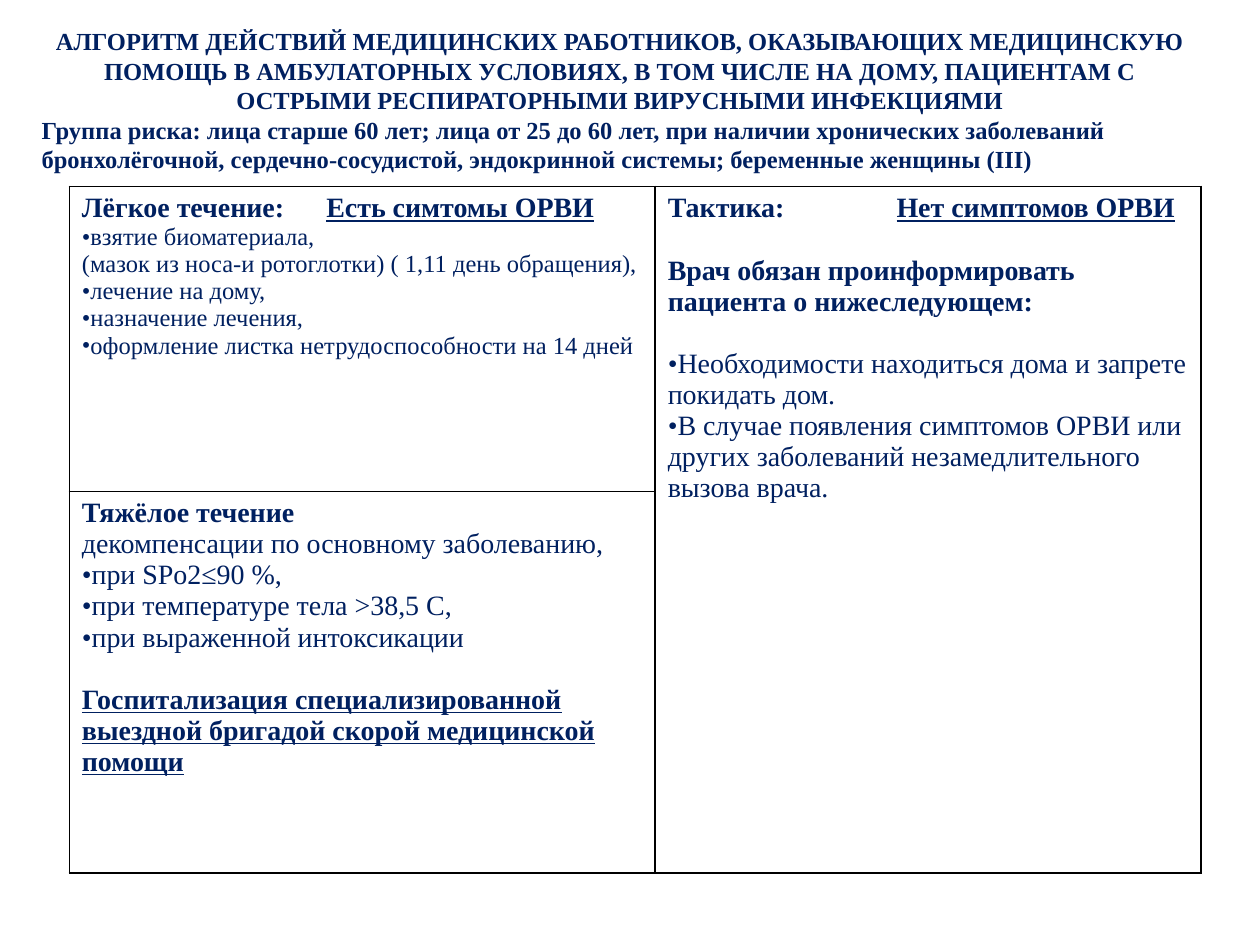
import pptx
import pptx.dml.color
import pptx.enum.text
import pptx.oxml
import pptx.oxml.ns
import pptx.util
from lxml import etree

Inches, Pt = pptx.util.Inches, pptx.util.Pt
NAVY = pptx.dml.color.RGBColor(0x00, 0x20, 0x60)
BLACK = pptx.dml.color.RGBColor(0, 0, 0)
FONT = "Times New Roman"
SMALL_SIZE, CELL_SIZE = 14, 16
BLANK_LINE = 17.8
LEFT = pptx.enum.text.PP_ALIGN.LEFT
CENTER = pptx.enum.text.PP_ALIGN.CENTER


class AlgorithmSlide:
    """Holds the text style and the slide being filled."""

    def __init__(self, deck):
        self.slide = deck.slides.add_slide(deck.slide_layouts[1])

    def child(self, parent, tag, **attributes):
        return etree.SubElement(parent, pptx.oxml.ns.qn(tag), attributes)

    def paragraph(self, frame, runs, size=CELL_SIZE, first=False, bullet=False,
                  gap=0, before=0, align=LEFT):
        """Add a paragraph; runs are (text, style) with b = bold, u = underlined.

        A run with style g is a space widened by gap points.
        """
        par = frame.paragraphs[0] if first else frame.add_paragraph()
        props = par._p.get_or_add_pPr()
        props.set("marL", "0")
        props.set("indent", "0")
        if bullet:
            self.child(props, "a:buFont", typeface=FONT)
            self.child(props, "a:buChar", char="•")
        else:
            self.child(props, "a:buNone")
        par.alignment = align
        par.space_before = Pt(before)
        for text, style in runs:
            run = par.add_run()
            run.text = text
            run.font.name = FONT
            run.font.size = Pt(size)
            run.font.color.rgb = NAVY
            run.font.bold = "b" in style
            run.font.underline = "u" in style
            if "g" in style:
                run._r.get_or_add_rPr().set("spc", str(gap * 100))

    def heading(self, placeholder, box, text, align):
        """Place a placeholder and fill it with one bold paragraph."""
        placeholder.left, placeholder.top, placeholder.width, placeholder.height = map(Inches, box)
        frame = placeholder.text_frame
        frame.word_wrap = True
        frame.auto_size = pptx.enum.text.MSO_AUTO_SIZE.SHAPE_TO_FIT_TEXT
        frame.vertical_anchor = pptx.enum.text.MSO_ANCHOR.TOP
        self.paragraph(frame, [(text, "b")], SMALL_SIZE, first=True, align=align)

    def table(self, box, columns, rows):
        """Add an unfilled table with thin black borders."""
        table = self.slide.shapes.add_table(len(rows), len(columns), *map(Inches, box)).table
        table.first_row = table.horz_banding = False
        for column, width in zip(table.columns, columns):
            column.width = Inches(width)
        for row, height in zip(table.rows, rows):
            row.height = Inches(height)
        for cell in table.iter_cells():
            props = cell._tc.get_or_add_tcPr()
            for side in ("a:lnL", "a:lnR", "a:lnT", "a:lnB"):
                line = self.child(props, side, w=str(Pt(1)))
                self.child(self.child(line, "a:solidFill"), "a:srgbClr", val=str(BLACK))
            cell.fill.background()
        return table

    def cell(self, cell, paragraphs):
        """Fill a cell; each paragraph is (runs, options)."""
        for number, (runs, options) in enumerate(paragraphs):
            self.paragraph(cell.text_frame, runs, first=number == 0, **options)


def main():
    deck = pptx.Presentation()
    deck.slide_width, deck.slide_height = Inches(10), Inches(7.5)
    page = AlgorithmSlide(deck)

    # Title and risk group
    title, risk_group = page.slide.placeholders
    page.heading(
        title, (0.23, 0.16, 9.38, 0.81),
        "АЛГОРИТМ ДЕЙСТВИЙ МЕДИЦИНСКИХ РАБОТНИКОВ, ОКАЗЫВАЮЩИХ МЕДИЦИНСКУЮ ПОМОЩЬ "
        "В АМБУЛАТОРНЫХ УСЛОВИЯХ, В ТОМ ЧИСЛЕ НА ДОМУ, ПАЦИЕНТАМ С ОСТРЫМИ "
        "РЕСПИРАТОРНЫМИ ВИРУСНЫМИ ИНФЕКЦИЯМИ", CENTER)
    page.heading(
        risk_group, (0.23, 0.86, 9.22, 0.57),
        "Группа риска: лица старше 60 лет; лица от 25 до 60 лет, при наличии "
        "хронических заболеваний бронхолёгочной, сердечно-сосудистой, эндокринной "
        "системы; беременные женщины (III)", LEFT)

    # Table: two courses on the left, one tall tactics cell on the right
    courses = page.table((0.55, 1.48, 8.98, 5.45), (4.65, 4.33), (2.42, 3.03))
    mild, tactics, severe = courses.cell(0, 0), courses.cell(0, 1), courses.cell(1, 0)
    tactics.merge(courses.cell(1, 1))

    # Mild course
    small = {"size": SMALL_SIZE}
    small_bullet = {"size": SMALL_SIZE, "bullet": True}
    page.cell(mild, [
        ([("Лёгкое течение:", "b"), (" ", "bg"), ("Есть симтомы ОРВИ", "bu")], {"gap": 20}),
        ([("взятие биоматериала,", "")], small_bullet),
        ([("(мазок из носа-и ротоглотки) ( 1,11 день обращения),", "")], small),
        ([("лечение на дому,", "")], small_bullet),
        ([("назначение лечения,", "")], small_bullet),
        ([("оформление листка нетрудоспособности на 14 дней", "")], small_bullet),
    ])

    # Tactics
    page.cell(tactics, [
        ([("Тактика:", "b"), (" ", "bg"), ("Нет симптомов ОРВИ", "bu")], {"gap": 60}),
        ([("Врач обязан проинформировать пациента о нижеследующем:", "b")],
         {"before": BLANK_LINE}),
        ([("Необходимости находиться дома и запрете покидать дом.", "")],
         {"bullet": True, "before": BLANK_LINE}),
        ([("В случае появления симптомов ОРВИ или других заболеваний "
           "незамедлительного вызова врача.", "")], {"bullet": True}),
    ])

    # Severe course
    page.cell(severe, [
        ([("Тяжёлое течение", "b")], {}),
        ([("декомпенсации по основному заболеванию,", "")], {}),
        ([("при SPo2≤90 %,", "")], {"bullet": True}),
        ([("при температуре тела >38,5 C,", "")], {"bullet": True}),
        ([("при выраженной интоксикации", "")], {"bullet": True}),
        ([("Госпитализация специализированной выездной бригадой скорой "
           "медицинской помощи", "bu")], {"before": BLANK_LINE}),
    ])

    deck.save("out.pptx")


if __name__ == "__main__":
    main()
